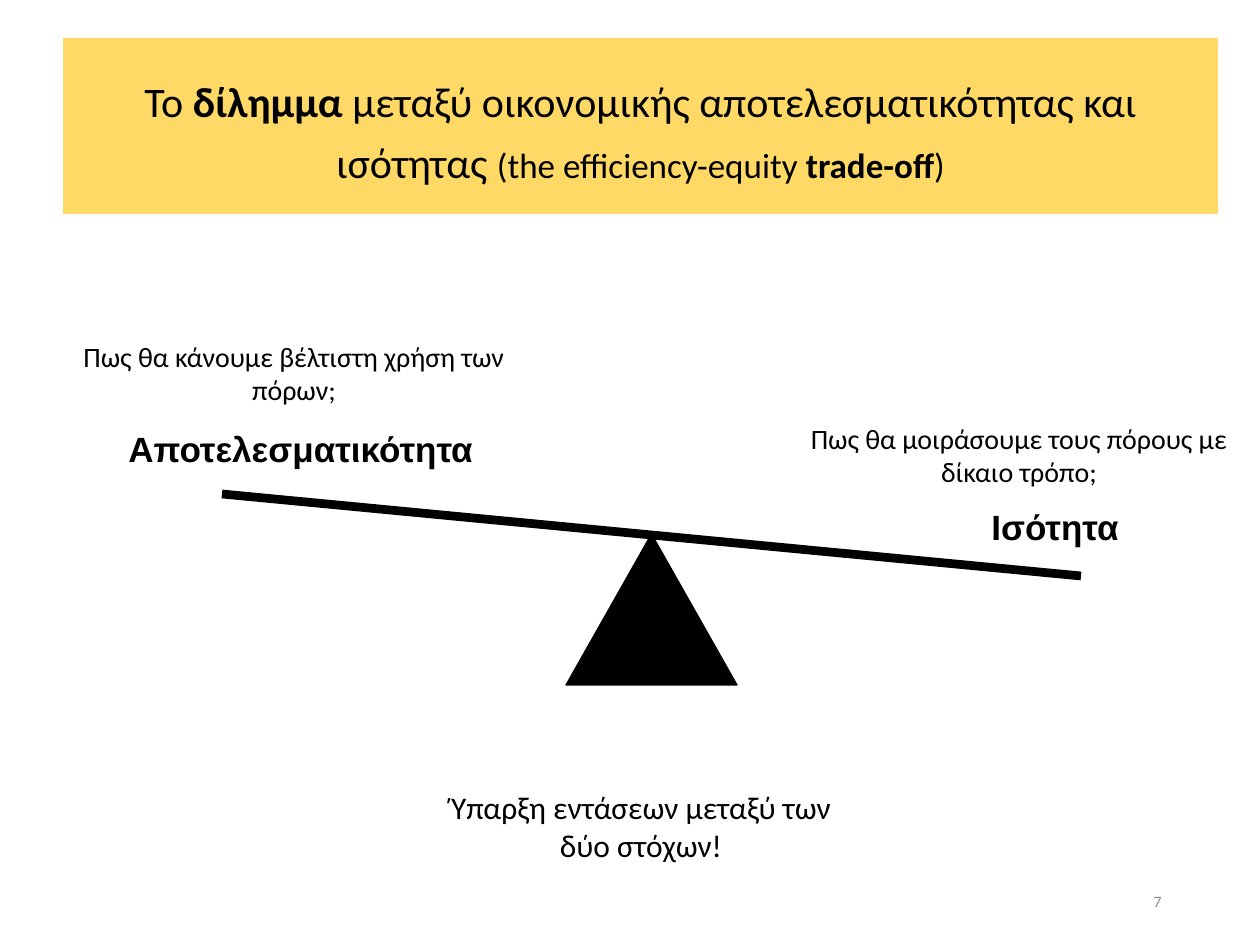
from pptx import Presentation
from pptx.dml.color import RGBColor
from pptx.enum.shapes import MSO_CONNECTOR as Connector, MSO_SHAPE as Shape
from pptx.enum.text import MSO_ANCHOR as Anchor, MSO_AUTO_SIZE as AutoSize, PP_ALIGN as Align
from pptx.oxml.ns import qn
from pptx.util import Pt

EMU_PER_PX = 914400 / 126
BLACK = RGBColor(0x00, 0x00, 0x00)
GRAY = RGBColor(0x8C, 0x8C, 0x8C)
YELLOW = RGBColor(0xFF, 0xD9, 0x66)


def px(length):
    return round(length * EMU_PER_PX)


def add_run(paragraph, text, size, font="Calibri", color=BLACK, bold=False):
    run = paragraph.add_run()
    run.text = text
    run.font.name = font
    run.font.size = Pt(size)
    run.font.bold = bold
    run.font.color.rgb = color


def add_text(shapes, box, text, align=Align.CENTER, anchor=Anchor.TOP, wrap=True, **run_format):
    frame = shapes.add_textbox(*map(px, box)).text_frame
    frame.word_wrap = wrap
    frame.vertical_anchor = anchor
    paragraph = frame.paragraphs[0]
    paragraph.alignment = align
    add_run(paragraph, text, **run_format)


def format_title(title, box):
    title.left, title.top, title.width, title.height = map(px, box)
    title.fill.solid()
    title.fill.fore_color.rgb = YELLOW
    frame = title.text_frame
    frame.auto_size = AutoSize.NONE
    frame.word_wrap = True
    frame.vertical_anchor = Anchor.MIDDLE
    paragraph = frame.paragraphs[0]
    paragraph.alignment = Align.CENTER
    paragraph.line_spacing = 1.2
    paragraph.space_after = Pt(6)
    for text, size, bold in (
        ("Το ", 24, False),
        ("δίλημμα", 24, True),
        (" μεταξύ οικονομικής αποτελεσματικότητας και ισότητας ", 24, False),
        ("(the efficiency-equity ", 20, False),
        ("trade-off", 20, True),
        (")", 20, False),
    ):
        add_run(paragraph, text, size, bold=bold)


def add_seesaw(slide, box):
    left, top, width, height = box
    shapes = slide.shapes.add_group_shape().shapes

    # Fulcrum
    fulcrum_width, fulcrum_height = 171, 151
    fulcrum = shapes.add_shape(
        Shape.ISOSCELES_TRIANGLE,
        px(left + width / 2), px(top + height - fulcrum_height),
        px(fulcrum_width), px(fulcrum_height))
    fulcrum.left -= px(fulcrum_width / 2)
    fulcrum.shadow.inherit = False
    fulcrum.fill.solid()
    fulcrum.fill.fore_color.rgb = BLACK
    fulcrum.line.color.rgb = BLACK
    fulcrum.line.width = Pt(0.75)

    # Tilted beam
    tilt = 82
    beam = shapes.add_connector(
        Connector.STRAIGHT, px(left), px(top), px(left + width), px(top + tilt))
    beam.line.color.rgb = BLACK
    beam.line.width = Pt(5)
    properties = beam._element.spPr
    properties.append(properties.makeelement(qn("a:effectLst"), {}))

    # Labels at the two ends
    label = dict(align=Align.LEFT, size=20, font="Arial", bold=True)
    add_text(shapes, (left - 106, top - 73, 442, 72), "Αποτελεσματικότητα", **label)
    add_text(shapes, (left + width - 102, top + 5, 154, 72), "Ισότητα", wrap=False, **label)


def add_questions(slide, box):
    left, top, width, height = box
    text_width, drop = 462, 82
    questions = (
        (left, top, "Πως θα κάνουμε βέλτιστη χρήση των πόρων;"),
        (left + width - text_width, top + drop, "Πως θα μοιράσουμε τους πόρους με δίκαιο τρόπο;"),
    )
    for x, y, question in questions:
        add_text(slide.shapes, (x, y, text_width, height - drop), question, size=16)


def main():
    presentation = Presentation()
    presentation.slide_width, presentation.slide_height = px(1260), px(945)
    slide = presentation.slides.add_slide(presentation.slide_layouts[5])

    format_title(slide.shapes.title, (63, 38, 1155, 176))
    add_seesaw(slide, (222, 494, 859, 191))
    add_questions(slide, (63, 333, 1187, 163))

    # Conclusion and slide number
    add_text(slide.shapes, (410, 782, 462, 89),
             "Ύπαρξη εντάσεων μεταξύ των δύο στόχων!", size=18)
    add_text(slide.shapes, (890, 876, 284, 50), "7",
             align=Align.RIGHT, anchor=Anchor.MIDDLE, size=9, color=GRAY)
    presentation.save("out.pptx")


if __name__ == "__main__":
    main()
